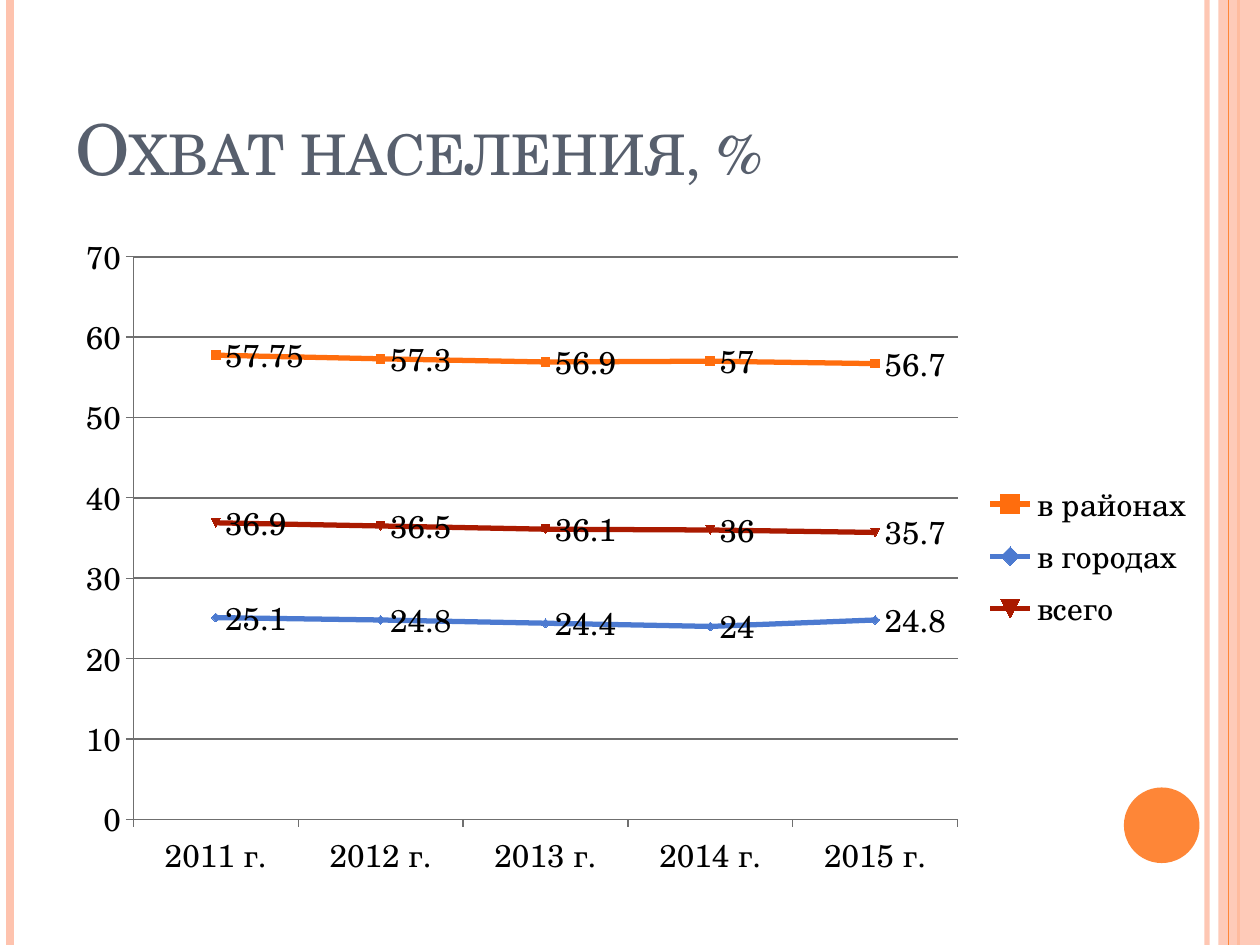
from dataclasses import dataclass

from lxml.etree import SubElement
from pptx import Presentation
from pptx.chart.data import CategoryChartData
from pptx.dml.color import RGBColor
from pptx.enum.chart import (XL_CHART_TYPE, XL_LABEL_POSITION,
                             XL_LEGEND_POSITION, XL_TICK_MARK)
from pptx.enum.shapes import MSO_CONNECTOR, MSO_SHAPE
from pptx.enum.text import MSO_ANCHOR
from pptx.oxml.ns import qn
from pptx.util import Inches, Pt

FONT = "TeX Gyre Schola"
COLORS = {
    "peach": "FEC3AE",
    "orange": "FE8637",
    "title": "575F6D",
    "text": "000000",
    "grid": "6F6F6F",
    "districts": "FF6D0D",
    "cities": "4C7AD0",
    "total": "AA1A00",
}


@dataclass
class Stripe:
    x: float
    width: float
    color: str
    alpha: int = 100


@dataclass
class Series:
    name: str
    values: tuple
    color: str


BACK_STRIPES = [
    Stripe(9.58, 3, "peach", 93),
    Stripe(0.08, 4.5, "peach"),
    Stripe(9.83, 1.5, "orange"),
]
FRONT_STRIPE = Stripe(9.75, 0.75, "orange")
YEARS = [f"{year} г." for year in range(2011, 2016)]
SERIES = [
    Series("в районах ", (57.75, 57.3, 56.9, 57, 56.7), "districts"),
    Series("в городах", (25.1, 24.8, 24.4, 24, 24.8), "cities"),
    Series("всего", (36.9, 36.5, 36.1, 36, 35.7), "total"),
]
PLOT_LAYOUT = {"x": 0.061, "y": 0.054, "w": 0.715, "h": 0.838}


def rgb(name: str) -> RGBColor:
    return RGBColor.from_string(COLORS[name])


def set_attrs(obj, values: dict) -> None:
    for name, value in values.items():
        setattr(obj, name, value)


def set_alpha(element, percent: int) -> None:
    color = element.find(".//" + qn("a:srgbClr"))
    SubElement(color, qn("a:alpha")).set("val", str(percent * 1000))


def format_line(line, color: str, width: float) -> None:
    line.color.rgb = rgb(color)
    line.width = Pt(width)


def format_font(font, color: str, size: float) -> None:
    set_attrs(font, {"name": FONT, "size": Pt(size), "bold": False})
    font.color.rgb = rgb(color)


def draw_stripe(s, stripe: Stripe) -> None:
    x = Inches(stripe.x)
    line = s.shapes.add_connector(MSO_CONNECTOR.STRAIGHT, x, 0, x, Inches(7.5))
    format_line(line.line, stripe.color, stripe.width)
    if stripe.alpha < 100:
        set_alpha(line._element.spPr, stripe.alpha)
    SubElement(line._element.spPr, qn("a:effectLst"))


def draw_shape(s, kind, box: tuple, color: str, alpha: int = 100) -> None:
    sp = s.shapes.add_shape(kind, *map(Inches, box))
    sp.shadow.inherit = False
    sp.fill.solid()
    sp.fill.fore_color.rgb = rgb(color)
    sp.line.fill.background()
    if alpha < 100:
        set_alpha(sp._element.spPr, alpha)


def draw_title(s, text: str) -> None:
    box = (0.5, 0.3, 8.17, 1.25)
    tf = s.shapes.add_textbox(*map(Inches, box)).text_frame
    set_attrs(tf, {"word_wrap": True, "vertical_anchor": MSO_ANCHOR.BOTTOM})
    r = tf.paragraphs[0].add_run()
    r.text = text
    format_font(r.font, "title", 40)
    r._r.get_or_add_rPr().set("cap", "small")


def set_plot_layout(chart) -> None:
    plot_area = chart._chartSpace.chart.plotArea
    layout = plot_area.find(qn("c:layout"))
    if layout is None:
        layout = SubElement(plot_area, qn("c:layout"))
        plot_area.insert(0, layout)
    manual = SubElement(layout, qn("c:manualLayout"))
    settings = {"layoutTarget": "inner", "xMode": "edge", "yMode": "edge"}
    for tag, value in (settings | PLOT_LAYOUT).items():
        SubElement(manual, qn("c:" + tag)).set("val", str(value))


def draw_chart(s) -> None:
    data = CategoryChartData()
    data.categories = YEARS
    for item in SERIES:
        data.add_series(item.name, item.values)
    box = (0.5, 1.75, 9.15, 5.33)
    chart = s.shapes.add_chart(XL_CHART_TYPE.LINE_MARKERS,
                               *map(Inches, box), data).chart
    set_attrs(chart, {"has_title": False, "has_legend": True})
    format_font(chart.font, "text", 18)
    set_attrs(chart.legend, {"position": XL_LEGEND_POSITION.RIGHT,
                             "include_in_layout": False})
    set_plot_layout(chart)

    # Axes and grid
    for axis in (chart.category_axis, chart.value_axis):
        set_attrs(axis, {"major_tick_mark": XL_TICK_MARK.OUTSIDE,
                         "minor_tick_mark": XL_TICK_MARK.NONE})
        format_line(axis.format.line, "grid", 0.75)
    axis = chart.value_axis
    set_attrs(axis, {"minimum_scale": 0, "maximum_scale": 70,
                     "major_unit": 10, "has_major_gridlines": True})
    format_line(axis.major_gridlines.format.line, "grid", 1)

    # Series and value labels
    plot = chart.plots[0]
    plot.vary_by_categories = False
    for item, series in zip(SERIES, plot.series):
        series.smooth = False
        format_line(series.format.line, item.color, 3)
        marker = series.marker.format
        marker.fill.solid()
        marker.fill.fore_color.rgb = rgb(item.color)
        format_line(marker.line, item.color, 0.75)
        set_attrs(series.data_labels, {"show_value": True,
                                       "position": XL_LABEL_POSITION.RIGHT})


def main() -> None:
    prs = Presentation()
    set_attrs(prs, {"slide_width": Inches(10), "slide_height": Inches(7.5)})
    s = prs.slides.add_slide(prs.slide_layouts[6])

    # Side decoration
    for stripe in BACK_STRIPES:
        draw_stripe(s, stripe)
    draw_shape(s, MSO_SHAPE.RECTANGLE, (9.67, 0, 0.33, 7.5), "peach", 87)
    draw_stripe(s, FRONT_STRIPE)
    draw_shape(s, MSO_SHAPE.OVAL, (8.92, 6.25, 0.6, 0.6), "orange")

    # Content
    draw_title(s, "Охват населения, %")
    draw_chart(s)
    prs.save("out.pptx")


if __name__ == "__main__":
    main()
